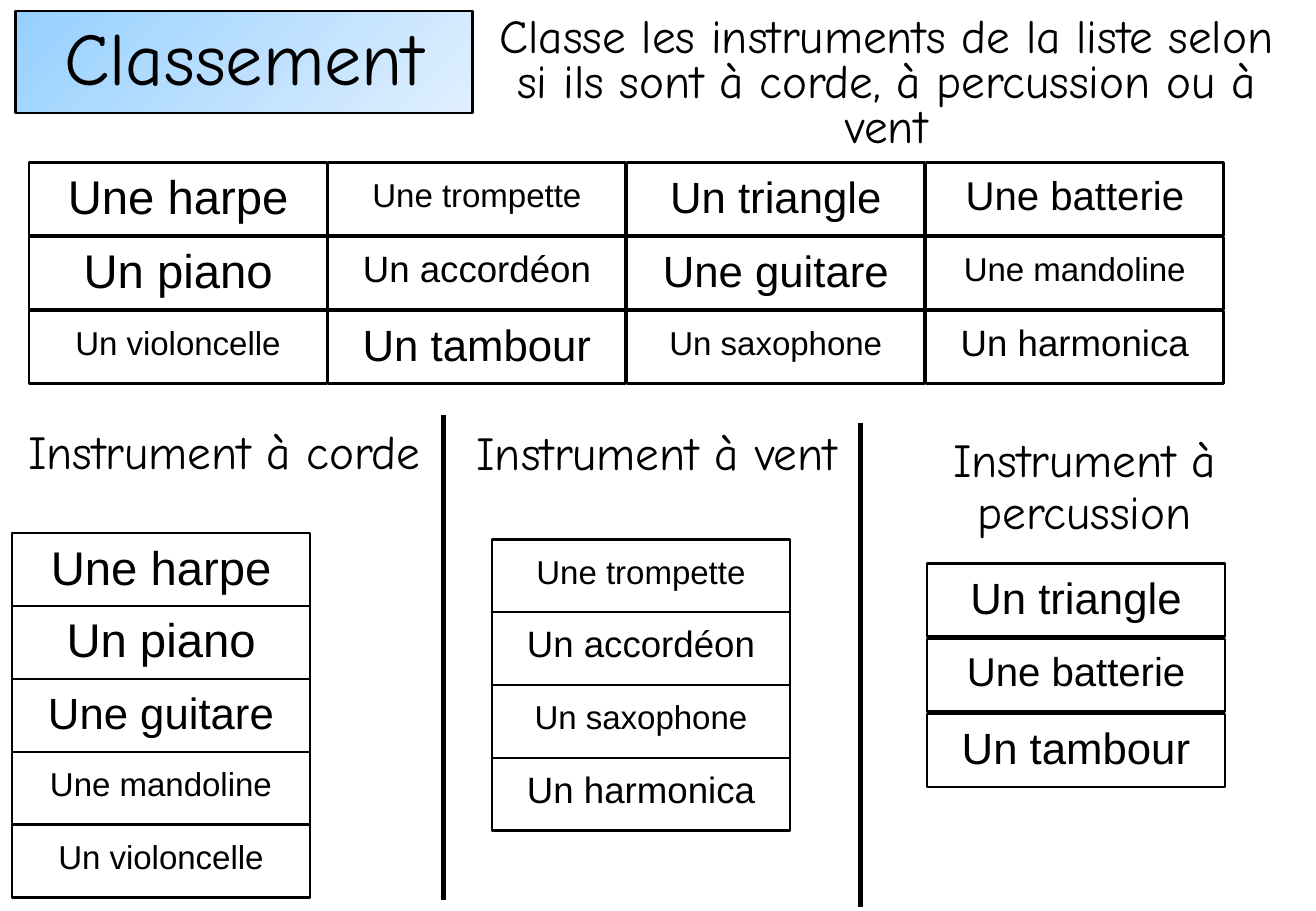
from lxml.etree import SubElement
from pptx import Presentation
from pptx.dml.color import RGBColor
from pptx.enum.shapes import MSO_CONNECTOR as Connector, MSO_SHAPE as Shape
from pptx.enum.text import MSO_ANCHOR as Anchor, PP_ALIGN as Align
from pptx.oxml.ns import qn
from pptx.util import Inches, Pt

COLORS = {"ink": "000000", "sky": "96D0FF", "pale": "E0EFFF"}
INK = RGBColor.from_string(COLORS["ink"])
HEADING_FONT, CARD_FONT = "Comic Neue", "Arial"

# Cards: pitch of the word list, and size of one card
COLUMN, ROW = 2.46, 0.61
CARD_WIDTH, CARD_HEIGHT = 2.45, 0.6

# Text size and line spacing of each instrument
INSTRUMENTS = {
    "Une harpe": (28, 0.9), "Une trompette": (19.6, 0.7),
    "Un triangle": (25.9, 0.9), "Une batterie": (23.8, 0.8),
    "Un piano": (28, 0.9), "Un accordéon": (21.7, 0.7),
    "Une guitare": (25.9, 0.9), "Une mandoline": (19.6, 0.7),
    "Un violoncelle": (19.6, 0.7), "Un tambour": (25.9, 0.9),
    "Un saxophone": (19.6, 0.7), "Un harmonica": (21.7, 0.7),
}

# Heading, its left, top and width; then left, top and pitch of its cards
FAMILIES = [
    ("Instrument à corde", 0.04, 3.48, 3.61, 0.1, 4.39, 0.6,
     ["Une harpe", "Un piano", "Une guitare", "Une mandoline", "Un violoncelle"]),
    ("Instrument à vent", 3.69, 3.49, 3.43, 4.05, 4.44, 0.6,
     ["Une trompette", "Un accordéon", "Un saxophone", "Un harmonica"]),
    ("Instrument à percussion", 7.12, 3.55, 3.61, 7.63, 4.64, 0.62,
     ["Un triangle", "Une batterie", "Un tambour"]),
]

deck = Presentation()
deck.slide_width, deck.slide_height = Inches(10.83), Inches(7.5)
slide = deck.slides.add_slide(deck.slide_layouts[6])


def add_label(text, left, top, width, height, size, spacing, font=HEADING_FONT,
              framed=False, before=10):
    """Add centred text, framed by a black outline or without one."""
    box = [Inches(length) for length in (left, top, width, height)]
    if framed:
        label = slide.shapes.add_shape(Shape.RECTANGLE, *box)
        label.shadow.inherit = False
        label.fill.background()
        label.line.color.rgb = INK
        label.line.width = Pt(1.5)
    else:
        label = slide.shapes.add_textbox(*box)
    frame = label.text_frame
    frame.word_wrap = True
    frame.vertical_anchor = Anchor.MIDDLE if framed else Anchor.TOP
    paragraph = frame.paragraphs[0]
    paragraph.alignment = Align.CENTER
    paragraph.line_spacing = spacing
    paragraph.space_before = Pt(before)
    run = paragraph.add_run()
    run.text = text
    run.font.name, run.font.size = font, Pt(size)
    run.font.color.rgb = INK
    return label


def add_card(instrument, left, top):
    add_label(instrument, left, top, CARD_WIDTH, CARD_HEIGHT,
              *INSTRUMENTS[instrument], font=CARD_FONT, framed=True)


# Title and instruction
title = add_label("Classement", 0.13, 0.09, 3.76, 0.84, 44, 0.9, framed=True, before=0)
title.fill.gradient()
title.fill.gradient_angle = 315
for stop, shade in zip(title.fill.gradient_stops, ("sky", "pale")):
    stop.color.rgb = RGBColor.from_string(COLORS[shade])
add_label("Classe les instruments de la liste selon si ils sont à corde, "
          "à percussion ou à vent", 3.89, 0.09, 6.81, 1.25, 28, 0.8)

# Word list, four cards to a row
for position, instrument in enumerate(INSTRUMENTS):
    row, column = divmod(position, 4)
    add_card(instrument, 0.24 + column * COLUMN, 1.34 + row * ROW)

# Families with their sorted cards
for heading, left, top, width, card_left, card_top, pitch, members in FAMILIES:
    add_label(heading, left, top, width, 0.96, 28, 0.9)
    for position, instrument in enumerate(members):
        add_card(instrument, card_left, card_top + position * pitch)

# Dividers between the families
for x, top in ((3.65, 3.42), (7.08, 3.48)):
    divider = slide.shapes.add_connector(
        Connector.STRAIGHT, Inches(x), Inches(top), Inches(x), Inches(top + 3.99))
    divider.line.color.rgb = INK
    divider.line.width = Pt(3)
    SubElement(divider._element.spPr, qn("a:effectLst"))

deck.save("out.pptx")
